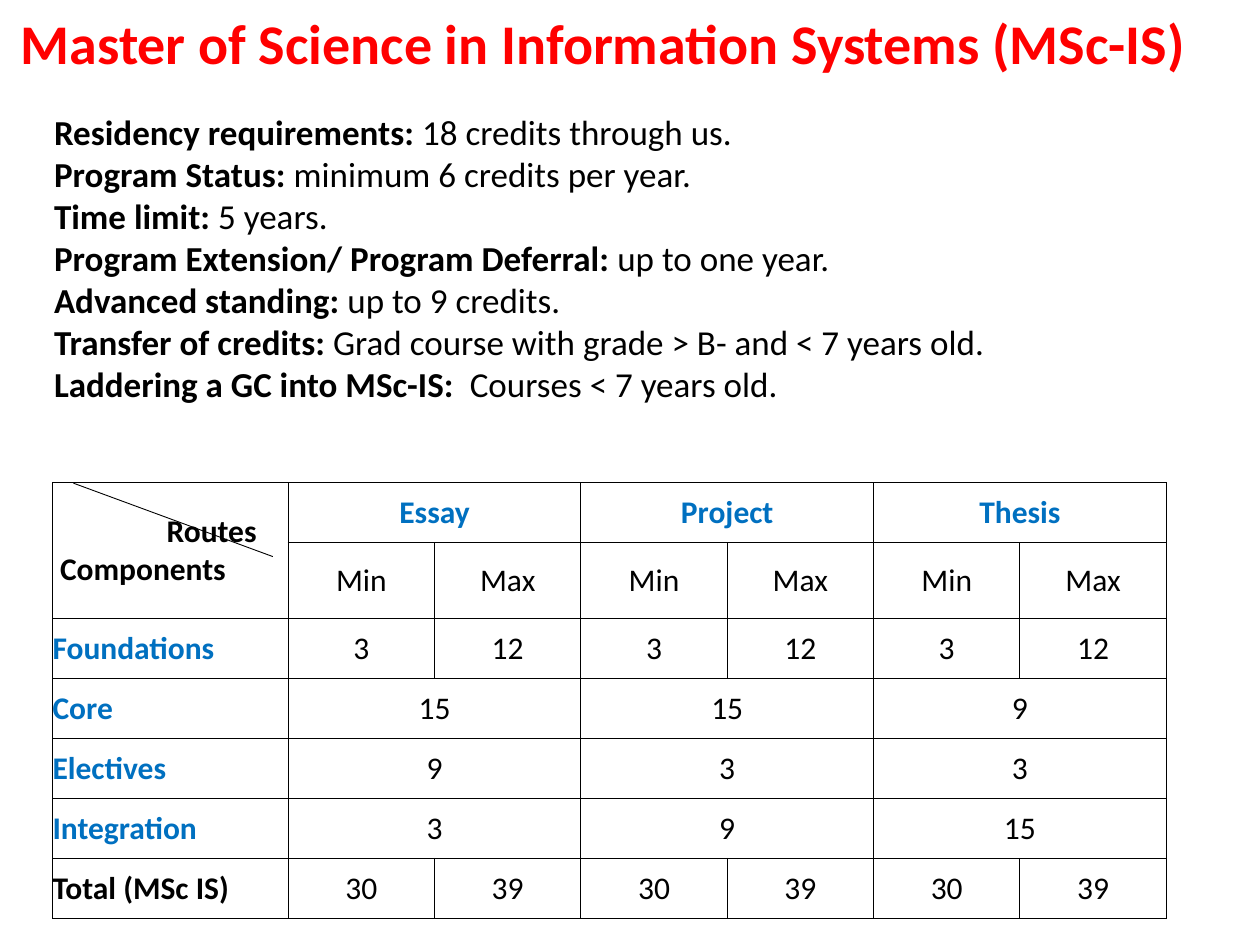
from dataclasses import dataclass

from lxml import etree
from pptx import Presentation
from pptx import util as u
from pptx.dml.color import RGBColor
from pptx.enum import shapes, text
from pptx.oxml import ns
from pptx.util import Cm


@dataclass(frozen=True)
class Theme:
    font: str = "Calibri"
    red: RGBColor = RGBColor(0xFF, 0x00, 0x00)
    blue: RGBColor = RGBColor(0x00, 0x70, 0xC0)
    black: RGBColor = RGBColor(0x00, 0x00, 0x00)
    title_size: u.Length = u.Pt(32)
    body_size: u.Length = u.Pt(20)
    table_size: u.Length = u.Pt(18)
    border: u.Length = u.Pt(0.75)
    diagonal: u.Length = u.Pt(0.5)


THEME = Theme()
CENTER, LEFT = text.PP_ALIGN.CENTER, text.PP_ALIGN.LEFT

TITLE = "Master of Science in Information Systems (MSc-IS)"
REQUIREMENTS = [
    ("Residency requirements: ", "18 credits through us."),
    ("Program Status: ", "minimum 6 credits per year."),
    ("Time limit: ", "5 years."),
    ("Program Extension/ Program Deferral: ", "up to one year."),
    ("Advanced standing: ", "up to 9 credits."),
    ("Transfer of credits: ", "Grad course with grade > B- and < 7 years old."),
    ("Laddering a GC into MSc-IS:  ", "Courses < 7 years old."),
]
ROUTES = ["Essay", "Project", "Thesis"]
COMPONENTS = [
    ("Foundations", ["3", "12"] * 3),
    ("Core", ["15", "15", "9"]),
    ("Electives", ["9", "3", "3"]),
    ("Integration", ["3", "9", "15"]),
    ("Total (MSc IS)", ["30", "39"] * 3),
]


def style_paragraph(para, size, color=THEME.black, bold=None, align=LEFT):
    para.alignment = align
    para.font.name = THEME.font
    para.font.size = size
    para.font.color.rgb = color
    para.font.bold = bold


def add_title(page):
    title = page.shapes.title
    title.left, title.top, title.width, title.height = Cm(0), Cm(0.2), Cm(24.33), Cm(1.47)
    frame = title.text_frame
    frame.text = TITLE
    frame.auto_size = text.MSO_AUTO_SIZE.NONE
    frame.vertical_anchor = text.MSO_ANCHOR.MIDDLE
    para = frame.paragraphs[0]
    style_paragraph(para, THEME.title_size, THEME.red, True, CENTER)
    para.line_spacing = 0.9


def add_requirements(page):
    box = page.shapes.add_textbox(Cm(0.84), Cm(2.1), Cm(24.13), Cm(6.25))
    frame = box.text_frame
    frame.word_wrap = True
    for index, (label, detail) in enumerate(REQUIREMENTS):
        para = frame.add_paragraph() if index else frame.paragraphs[0]
        style_paragraph(para, THEME.body_size)
        for words, bold in ((label, True), (detail, False)):
            span = para.add_run()
            span.text = words
            span.font.bold = bold


def format_cell(cell):
    """Clear the fill and margins, and draw a thin border on every side."""
    cell.fill.background()
    cell.vertical_anchor = text.MSO_ANCHOR.MIDDLE
    cell.margin_left = cell.margin_right = cell.margin_top = cell.margin_bottom = 0
    style_paragraph(cell.text_frame.paragraphs[0], THEME.table_size)
    properties = cell._tc.get_or_add_tcPr()
    for position, side in enumerate(("lnL", "lnR", "lnT", "lnB")):
        line = etree.Element(ns.qn(f"a:{side}"), w=str(int(THEME.border)))
        fill = etree.SubElement(line, ns.qn("a:solidFill"))
        etree.SubElement(fill, ns.qn("a:srgbClr"), val=str(THEME.black))
        properties.insert(position, line)


def write_cell(cell, words, color=THEME.black, bold=False, align=CENTER):
    cell.text = words
    style_paragraph(cell.text_frame.paragraphs[0], THEME.table_size, color, bold, align)


def write_values(table, row, values, **style):
    """Spread the values evenly over the six route columns, merging where needed."""
    width = 2 * len(ROUTES) // len(values)
    for index, value in enumerate(values):
        column = 1 + index * width
        cell = table.cell(row, column)
        if width > 1:
            cell.merge(table.cell(row, column + width - 1))
        write_cell(cell, value, **style)


def write_corner(table):
    corner = table.cell(0, 0)
    corner.merge(table.cell(1, 0))
    corner.text = "Routes\nComponents"
    for para, indent in zip(corner.text_frame.paragraphs, (Cm(2.3), Cm(0.15))):
        style_paragraph(para, THEME.table_size, bold=True)
        para._p.get_or_add_pPr().set("marL", str(int(indent)))


def add_credit_table(page):
    rows, columns = 2 + len(COMPONENTS), 1 + 2 * len(ROUTES)
    table = page.shapes.add_table(rows, columns, Cm(1.06), Cm(9.73), Cm(22.43), Cm(8.47)).table
    table.first_row = table.horz_banding = False
    for index, column in enumerate(table.columns):
        column.width = Cm(2.95) if index else Cm(4.75)
    for row in table.rows:
        row.height = Cm(1.21)
    for cell in table.iter_cells():
        format_cell(cell)

    write_corner(table)
    write_values(table, 0, ROUTES, color=THEME.blue, bold=True)
    write_values(table, 1, ["Min", "Max"] * len(ROUTES))
    for row, (name, values) in enumerate(COMPONENTS, start=2):
        color = THEME.black if name.startswith("Total") else THEME.blue
        write_cell(table.cell(row, 0), name, color, True, LEFT)
        write_values(table, row, values)


def add_corner_diagonal(page):
    line = page.shapes.add_connector(
        shapes.MSO_CONNECTOR.STRAIGHT, Cm(1.48), Cm(9.74), Cm(5.5), Cm(11.22))
    line.line.color.rgb = THEME.black
    line.line.width = THEME.diagonal
    etree.SubElement(line._element.spPr, ns.qn("a:effectLst"))


def main():
    deck = Presentation()
    deck.slide_width, deck.slide_height = Cm(25.4), Cm(19.05)
    page = deck.slides.add_slide(deck.slide_layouts.get_by_name("Title Only"))
    add_title(page)
    add_requirements(page)
    add_credit_table(page)
    add_corner_diagonal(page)
    deck.save("out.pptx")


if __name__ == "__main__":
    main()
